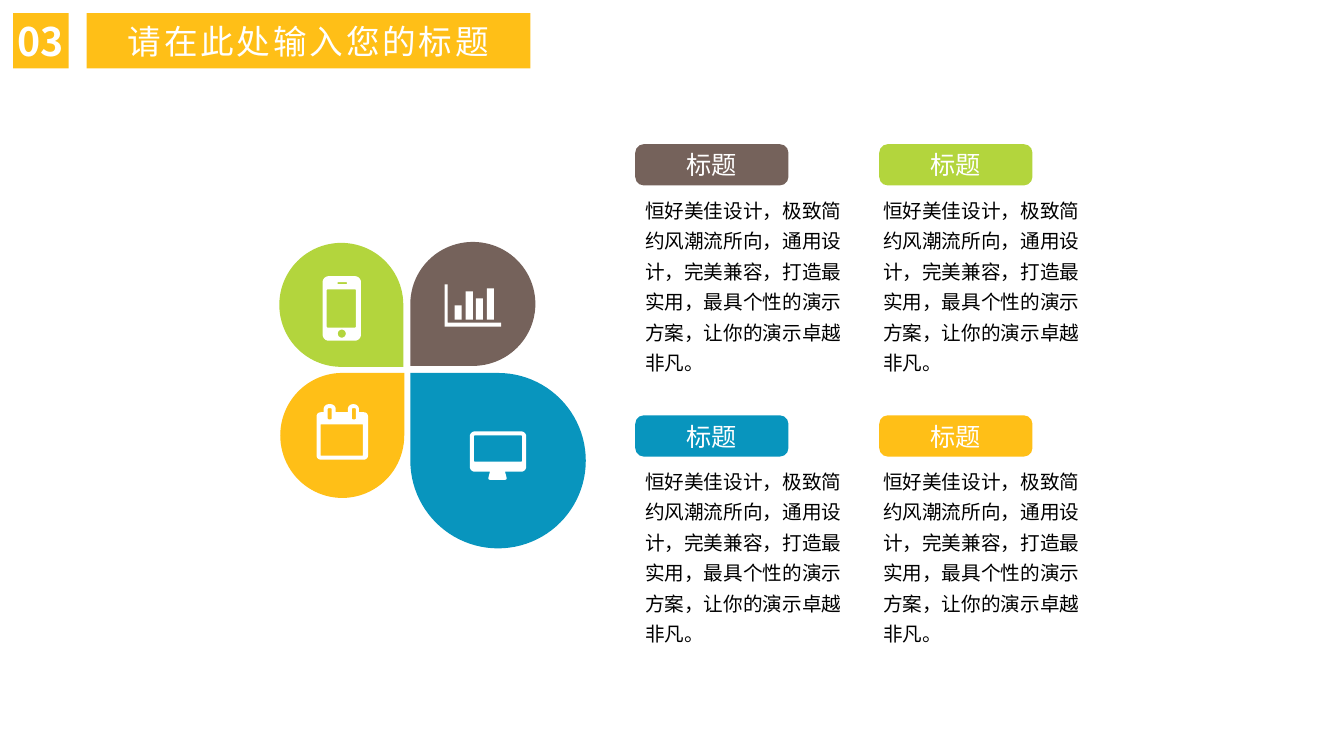
from dataclasses import dataclass
from math import dist, sqrt

from lxml.etree import SubElement
from pptx import Presentation
from pptx.dml.color import RGBColor
from pptx.enum.shapes import MSO_SHAPE as Preset
from pptx.enum.text import MSO_ANCHOR as Anchor, MSO_AUTO_SIZE as AutoSize, PP_ALIGN as Align
from pptx.oxml.ns import qn
from pptx.shapes.autoshape import Shape
from pptx.slide import Slide
from pptx.util import Inches, Pt

YELLOW = RGBColor(0xFF, 0xBF, 0x17)
GREEN = RGBColor(0xB3, 0xD5, 0x3D)
BROWN = RGBColor(0x75, 0x62, 0x5B)
BLUE = RGBColor(0x08, 0x95, 0xBE)
WHITE = RGBColor(0xFF, 0xFF, 0xFF)
BLACK = RGBColor(0x00, 0x00, 0x00)
CJK_FONT = "Noto Sans CJK SC"
BODY_FONT = "Arial"
BODY_TEXT = "恒好美佳设计，极致简约风潮流所向，通用设计，完美兼容，打造最实用，最具个性的演示方案，让你的演示卓越非凡。"
ARC_STEPS = 6

Point = tuple[float, float]
Corner = tuple[float, float, float]
Contour = list[Point]


@dataclass
class Petal:
    left: float
    top: float
    width: float
    height: float
    rotation: int
    color: RGBColor


@dataclass
class Card:
    column: int
    row: int
    color: RGBColor


PETALS = [
    Petal(4.07, 3.7, 1.74, 1.74, 270, BLUE),
    Petal(4.07, 2.4, 1.24, 1.23, 180, BROWN),
    Petal(2.78, 3.7, 1.23, 1.24, 0, YELLOW),
    Petal(2.77, 2.41, 1.23, 1.23, 90, GREEN),
]
CARDS = [Card(0, 0, BROWN), Card(1, 0, GREEN), Card(0, 1, BLUE), Card(1, 1, YELLOW)]


def round_corner(before: Corner, corner: Corner, after: Corner) -> Contour:
    x, y, radius = corner
    if not radius:
        return [(x, y)]

    def toward(other: Corner) -> Point:
        share = radius / dist((x, y), other[:2])
        return x + (other[0] - x) * share, y + (other[1] - y) * share

    start, end = toward(before), toward(after)
    points = []
    for step in range(ARC_STEPS + 1):
        t = step / ARC_STEPS
        a, b, c = (1 - t) ** 2, sqrt(2) * t * (1 - t), t ** 2
        total = a + b + c
        points.append(((a * start[0] + b * x + c * end[0]) / total,
                       (a * start[1] + b * y + c * end[1]) / total))
    return points


def outline(corners: list[Corner]) -> Contour:
    count = len(corners)
    return [point for i in range(count)
            for point in round_corner(corners[i - 1], corners[i], corners[(i + 1) % count])]


def box(left: float, top: float, right: float, bottom: float, radius: float = 0) -> Contour:
    return outline([(left, top, radius), (right, top, radius),
                    (right, bottom, radius), (left, bottom, radius)])


def calendar_icon() -> list[Contour]:
    corners = [(3.14, 4.09, 0.04)]
    for left, right in ((3.21, 3.33), (3.45, 3.56)):
        corners += [(left, 4.09, 0), (left, 4.01, 0.05), (right, 4.01, 0.05), (right, 4.09, 0)]
    corners += [(3.65, 4.09, 0.04), (3.65, 4.56, 0.04), (3.14, 4.56, 0.04)]
    slots = [box(left, 4.05, left + 0.04, 4.16, 0.01) for left in (3.25, 3.49)]
    return [outline(corners), box(3.18, 4.21, 3.6, 4.52), *slots]


def monitor_icon() -> list[Contour]:
    frame = outline([(4.66, 4.28, 0.05), (5.22, 4.28, 0.05), (5.22, 4.68, 0.05),
                     (5.01, 4.68, 0), (5.03, 4.76, 0.02), (4.84, 4.76, 0.02),
                     (4.86, 4.68, 0), (4.66, 4.68, 0.05)])
    return [frame, box(4.7, 4.32, 5.18, 4.58, 0.01)]


def chart_icon() -> list[Contour]:
    axes = [(4.97, 3.24), (4.41, 3.24), (4.41, 2.82), (4.44, 2.82), (4.44, 3.2), (4.97, 3.2)]
    bars = [box(left, top, left + 0.07, 3.17)
            for left, top in ((4.51, 3.03), (4.62, 2.89), (4.72, 2.96), (4.83, 2.86))]
    return [axes, *bars]


def phone_icon() -> list[Contour]:
    return [box(3.2, 2.74, 3.58, 3.38, 0.06), box(3.24, 2.87, 3.53, 3.25, 0.01),
            box(3.35, 2.8, 3.44, 2.82), box(3.35, 3.27, 3.43, 3.35, 0.04)]


def paint(shape: Shape, color: RGBColor) -> None:
    shape.shadow.inherit = False
    shape.fill.solid()
    shape.fill.fore_color.rgb = color
    shape.line.fill.background()


def write(shape: Shape, text: str, size: int, color: RGBColor = WHITE,
          font_name: str = CJK_FONT, bold: bool = False, align: Align = Align.CENTER,
          anchor: Anchor = Anchor.MIDDLE) -> None:
    frame = shape.text_frame
    frame.text = text
    frame.word_wrap = True
    frame.vertical_anchor = anchor
    paragraph = frame.paragraphs[0]
    paragraph.alignment = align
    run = paragraph.runs[0]
    run.font.size = Pt(size)
    run.font.bold = bold
    run.font.color.rgb = color
    run.font.name = font_name
    SubElement(run.font._element, qn("a:ea")).set("typeface", CJK_FONT)


def add_preset(slide: Slide, preset: Preset, left: float, top: float,
               width: float, height: float, color: RGBColor) -> Shape:
    shape = slide.shapes.add_shape(preset, Inches(left), Inches(top), Inches(width), Inches(height))
    paint(shape, color)
    return shape


def add_icon(slide: Slide, contours: list[Contour]) -> None:
    scaled = [[(Inches(x), Inches(y)) for x, y in contour] for contour in contours]
    builder = slide.shapes.build_freeform(*scaled[0][0])
    for index, (first, *rest) in enumerate(scaled):
        if index:
            builder.move_to(*first)
        builder.add_line_segments(rest, close=True)
    paint(builder.convert_to_shape(), WHITE)


def add_card(slide: Slide, card: Card) -> None:
    top = 1.43 + 2.69 * card.row
    label = add_preset(slide, Preset.ROUNDED_RECTANGLE, 6.3 + 2.42 * card.column, top,
                       1.52, 0.41, card.color)
    label.adjustments[0] = 0.21
    write(label, "标题", 18)
    body = slide.shapes.add_textbox(Inches(6.3 + 2.36 * card.column), Inches(top + 0.42),
                                    Inches(2.27), Inches(1.94))
    write(body, BODY_TEXT, 14, BLACK, BODY_FONT, align=Align.LEFT, anchor=Anchor.TOP)
    body.text_frame.auto_size = AutoSize.SHAPE_TO_FIT_TEXT
    paragraph = body.text_frame.paragraphs[0]
    paragraph.line_spacing = 1.3
    paragraph.space_before = paragraph.space_after = Pt(6)


def add_header(slide: Slide) -> None:
    number = add_preset(slide, Preset.RECTANGLE, 0.13, 0.13, 0.55, 0.55, YELLOW)
    write(number, "03", 28, bold=True)
    frame = number.text_frame
    frame.margin_left = frame.margin_right = frame.margin_top = frame.margin_bottom = 0
    title = slide.shapes.title
    title.left, title.top = Inches(0.86), Inches(0.13)
    title.width, title.height = Inches(4.4), Inches(0.55)
    paint(title, YELLOW)
    write(title, "请在此处输入您的标题", 24)
    title.text_frame.auto_size = AutoSize.NONE
    title.text_frame.paragraphs[0].runs[0].font._element.set("spc", "200")


def main() -> None:
    presentation = Presentation()
    presentation.slide_width, presentation.slide_height = Inches(13.33), Inches(7.5)
    slide = presentation.slides.add_slide(presentation.slide_layouts[5])
    for petal in PETALS:
        shape = add_preset(slide, Preset.TEAR, petal.left, petal.top,
                           petal.width, petal.height, petal.color)
        shape.rotation = petal.rotation
    for icon in (calendar_icon(), monitor_icon(), chart_icon(), phone_icon()):
        add_icon(slide, icon)
    for card in CARDS:
        add_card(slide, card)
    add_header(slide)
    presentation.save("out.pptx")


if __name__ == "__main__":
    main()
